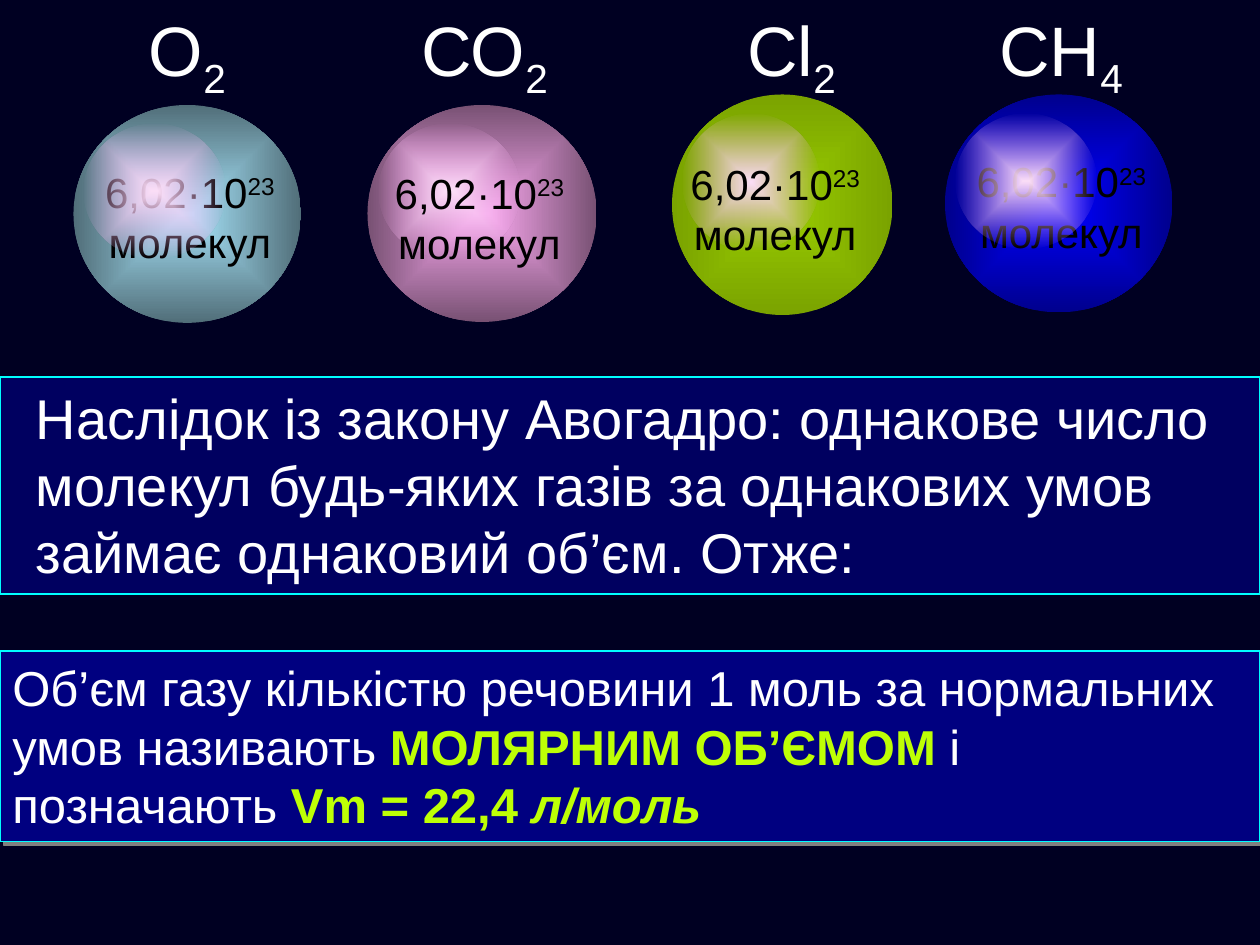
"""Build the slide about equal molecule counts in gases and molar volume."""
import lxml.etree
import pptx
import pptx.dml.color
import pptx.enum.shapes
import pptx.enum.text
import pptx.oxml
import pptx.oxml.ns
import pptx.util

Pt = pptx.util.Pt
RGBColor = pptx.dml.color.RGBColor
SHAPES = pptx.enum.shapes.MSO_SHAPE
ALIGN = pptx.enum.text.PP_ALIGN
ANCHOR = pptx.enum.text.MSO_ANCHOR
NAMESPACE = pptx.oxml.ns.nsdecls("a")

NIGHT = RGBColor(0x00, 0x00, 0x22)
NAVY = RGBColor(0x00, 0x00, 0x60)
BLUE = RGBColor(0x00, 0x00, 0x80)
CYAN = RGBColor(0x00, 0xFF, 0xFF)
LIME = RGBColor(0xBE, 0xFF, 0x05)
WHITE = RGBColor(0xFF, 0xFF, 0xFF)
BLACK = RGBColor(0x00, 0x00, 0x00)
GRAY = RGBColor(0x80, 0x80, 0x80)
GLOW = RGBColor(0xFC, 0xDF, 0xF8)
PINK = RGBColor(0xF7, 0xA7, 0xED)
SKY = RGBColor(0xA6, 0xE3, 0xF8)
SLATE = RGBColor(0x51, 0x6E, 0x79)
MAUVE = RGBColor(0x78, 0x51, 0x73)
GREEN = RGBColor(0x99, 0xCC, 0x00)
OLIVE = RGBColor(0x7A, 0xA3, 0x00)
BRIGHT_BLUE = RGBColor(0x00, 0x00, 0xFF)
DEEP_BLUE = RGBColor(0x00, 0x00, 0x8D)

presentation = pptx.Presentation()
presentation.slide_width = Pt(720)
presentation.slide_height = Pt(540)
slide = presentation.slides.add_slide(presentation.slide_layouts[6])
slide.background.fill.solid()
slide.background.fill.fore_color.rgb = NIGHT


def add_ball(left, top, width, height, inner, outer, outer_alpha=100):
    ball = slide.shapes.add_shape(SHAPES.OVAL, Pt(left), Pt(top), Pt(width), Pt(height))
    ball.shadow.inherit = False
    ball.line.fill.background()
    ball.fill.solid()
    solid = ball._element.spPr.find(pptx.oxml.ns.qn("a:solidFill"))
    gradient = pptx.oxml.parse_xml(
        f'<a:gradFill {NAMESPACE} rotWithShape="1"><a:gsLst>'
        f'<a:gs pos="0"><a:srgbClr val="{inner}"/></a:gs>'
        f'<a:gs pos="100000"><a:srgbClr val="{outer}">'
        f'<a:alpha val="{outer_alpha * 1000}"/></a:srgbClr></a:gs></a:gsLst>'
        '<a:path path="shape"><a:fillToRect l="50000" t="50000" r="50000" b="50000"/>'
        '</a:path></a:gradFill>'
    )
    solid.getparent().replace(solid, gradient)


def add_runs(paragraph, size, color, texts):
    paragraph.font.name = "Arial"
    paragraph.font.size = Pt(size)
    paragraph.font.color.rgb = color
    for text, baseline in texts:
        run = paragraph.add_run()
        run.text = text
        if baseline:
            run._r.get_or_add_rPr().set("baseline", str(baseline * 1000))


balls = [
    (42, 60, 130, 124.5, SKY, SLATE, 108.5, 95, False),
    (210, 60, 131, 124, PINK, MAUVE, 274, 95.5, True),
    (384, 54, 126, 126, GREEN, OLIVE, 443, 90.5, True),
    (540, 54, 130, 124.5, BRIGHT_BLUE, DEEP_BLUE, 606.5, 89, False),
]
for left, top, width, height, inner, outer, center, label_top, label_in_front in balls:
    highlight = (left + 6, top + 10.8, width * 0.62, height * 0.62, GLOW, PINK, 0)
    add_ball(left, top, width, height, inner, outer)
    if label_in_front:
        add_ball(*highlight)
    label = slide.shapes.add_textbox(Pt(center - 60), Pt(label_top), Pt(120), Pt(56))
    frame = label.text_frame
    frame.word_wrap = True
    frame.margin_left = frame.margin_right = frame.margin_top = frame.margin_bottom = 0
    paragraph = frame.paragraphs[0]
    paragraph.alignment = ALIGN.CENTER
    add_runs(paragraph, 24, BLACK, [("6,02·10", 0), ("23", 30)])
    paragraph.add_line_break()
    add_runs(paragraph, 24, BLACK, [("молекул", 0)])
    if not label_in_front:
        add_ball(*highlight)

formulas = [
    (78, 72, "О", "2"),
    (234, 96, "СО", "2"),
    (420, 72, "Сl", "2"),
    (564, 90, "СH", "4"),
]
for left, width, symbol, count in formulas:
    formula = slide.shapes.add_textbox(Pt(left), 0, Pt(width), Pt(55.5))
    formula.text_frame.word_wrap = True
    add_runs(formula.text_frame.paragraphs[0], 40, WHITE, [(symbol, 0), (count, -25)])

panels = []
for top, height, color in [(215.5, 124, NAVY), (372, 109, BLUE)]:
    panel = slide.shapes.add_shape(SHAPES.RECTANGLE, 0, Pt(top), Pt(720), Pt(height))
    panel.shadow.inherit = False
    panel.fill.solid()
    panel.fill.fore_color.rgb = color
    panel.line.color.rgb = CYAN
    panel.line.width = Pt(0.75)
    panel.text_frame.word_wrap = True
    panel.text_frame.vertical_anchor = ANCHOR.TOP
    panel.text_frame.paragraphs[0].alignment = ALIGN.LEFT
    panels.append(panel)
law, definition = panels

law.text_frame.margin_left = Pt(20.5)
add_runs(law.text_frame.paragraphs[0], 32, WHITE, [(
    "Наслідок із закону Авогадро: однакове число молекул будь-яких газів "
    "за однакових умов займає однаковий об’єм. Отже:", 0)])

effects = definition._element.spPr.find(pptx.oxml.ns.qn("a:effectLst"))
effects.append(pptx.oxml.parse_xml(
    f'<a:outerShdw {NAMESPACE} dist="{Pt(2.8)}" dir="2700000" algn="ctr" rotWithShape="0">'
    f'<a:srgbClr val="{GRAY}"/></a:outerShdw>'
))
paragraph = definition.text_frame.paragraphs[0]
add_runs(paragraph, 28, WHITE, [
    ("Об’єм газу кількістю речовини 1 моль за нормальних умов називають ", 0),
    ("МОЛЯРНИМ ОБ’ЄМОМ ", 0),
    ("і", 0),
])
paragraph.add_line_break()
add_runs(paragraph, 28, WHITE, [("позначають ", 0), ("Vm = 22,4 ", 0), ("л/моль", 0)])
for index in (1, 4, 5):
    font = paragraph.runs[index].font
    font.bold = True
    font.color.rgb = LIME
paragraph.runs[5].font.italic = True

presentation.save("out.pptx")
